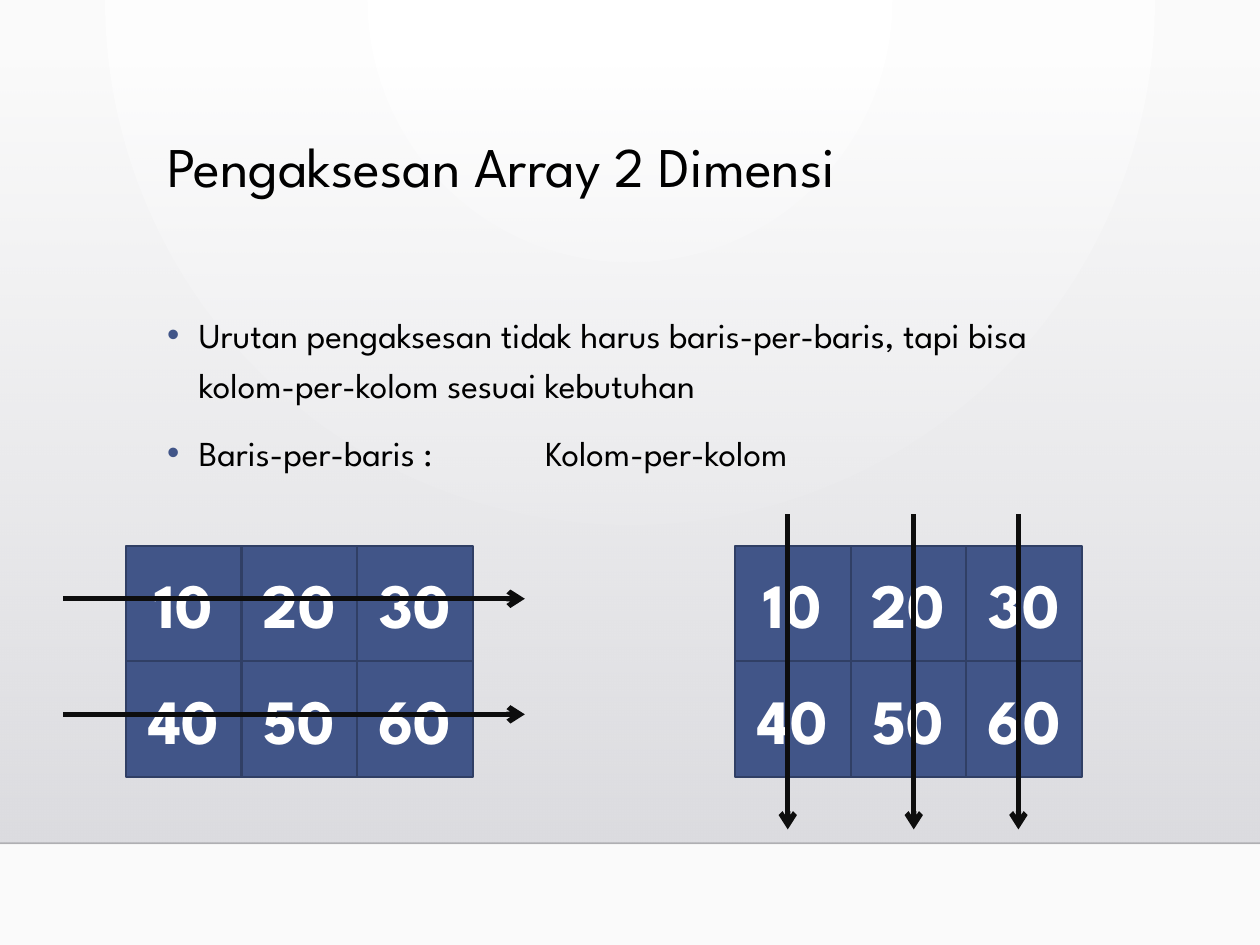
from lxml.etree import SubElement
from pptx import Presentation
from pptx.dml.color import RGBColor
from pptx.enum.shapes import MSO_CONNECTOR, MSO_SHAPE
from pptx.enum.text import MSO_ANCHOR, PP_ALIGN
from pptx.oxml import parse_xml
from pptx.oxml.ns import nsdecls, qn
from pptx.util import Cm, Pt

FONT = "League Spartan"
BLACK = RGBColor(0x00, 0x00, 0x00)
WHITE = RGBColor(0xFF, 0xFF, 0xFF)
OFF_WHITE = RGBColor(0xFA, 0xFA, 0xFA)
PANEL_TOP = RGBColor(0xDC, 0xDC, 0xE0)
PANEL_BOTTOM = RGBColor(0xDE, 0xDE, 0xE2)
BLUE = RGBColor(0x41, 0x55, 0x88)
DARK_BLUE = RGBColor(0x30, 0x3F, 0x65)
ARROW = RGBColor(0x0D, 0x0D, 0x0D)
RADIAL = '<a:path path="circle"><a:fillToRect l="43000" r="43000" b="100000"/></a:path>'
DOWNWARD = '<a:lin ang="5400000" scaled="0"/>'

CELL = 2.33
GRID_TOP = 11
ROWS = (("10", "20", "30"), ("40", "50", "60"))
BULLETS = (
    "Urutan pengaksesan tidak harus baris-per-baris, tapi bisa kolom-per-kolom sesuai kebutuhan",
    "Baris-per-baris : \t\tKolom-per-kolom",
)


def set_gradient(fill, first, last, first_alpha, direction):
    """Turn a fill into a two-colour gradient with the given direction."""
    fill.gradient()
    gradient = fill._fill._gradFill
    for child in list(gradient):
        gradient.remove(child)
    source = (
        f'<a:gradFill {nsdecls("a")}><a:gsLst>'
        f'<a:gs pos="0"><a:srgbClr val="{first}"><a:alpha val="{first_alpha * 1000}"/></a:srgbClr></a:gs>'
        f'<a:gs pos="100000"><a:srgbClr val="{last}"/></a:gs>'
        f"</a:gsLst>{direction}</a:gradFill>"
    )
    gradient.extend(list(parse_xml(source)))


def add_line(slide, start, end, color, width):
    """Add a straight line without shadow and return it."""
    line = slide.shapes.add_connector(
        MSO_CONNECTOR.STRAIGHT, *(Cm(value) for value in (*start, *end))
    )
    line.line.color.rgb = color
    line.line.width = Pt(width)
    SubElement(line._element.spPr, qn("a:effectLst"))
    return line


def add_arrow(slide, start, end):
    """Add a thick line with an open arrowhead at its end."""
    arrow = add_line(slide, start, end, ARROW, 3)
    SubElement(arrow.line._get_or_add_ln(), qn("a:tailEnd"), type="arrow")


def add_backdrop(slide):
    """Add the radial background, the fading panel and its lower edge."""
    set_gradient(slide.background.fill, WHITE, OFF_WHITE, 100, RADIAL)
    panel = slide.shapes.add_shape(MSO_SHAPE.RECTANGLE, 0, Cm(1.3), Cm(25.4), Cm(15.7))
    panel.shadow.inherit = False
    panel.line.fill.background()
    set_gradient(panel.fill, PANEL_TOP, PANEL_BOTTOM, 0, DOWNWARD)
    edge = add_line(slide, (0, 17), (25.4, 17), BLACK, 1)
    color = edge._element.spPr.find(".//" + qn("a:srgbClr"))
    SubElement(color, qn("a:alpha"), val="20000")


def add_text_frame(slide, top, height):
    """Add a wrapping text box in the main column and return its frame."""
    box = slide.shapes.add_textbox(Cm(3.12), Cm(top), Cm(18.26), Cm(height))
    box.text_frame.word_wrap = True
    return box.text_frame


def add_run(paragraph, text, size, color, bold=False):
    """Add one formatted run to a paragraph."""
    run = paragraph.add_run()
    run.text = text
    run.font.name = FONT
    run.font.size = Pt(size)
    run.font.bold = bold
    run.font.color.rgb = color


def format_bullet(paragraph):
    """Give a paragraph a hanging blue bullet and its tab stops."""
    properties = paragraph._p.get_or_add_pPr()
    properties.set("marL", str(Cm(0.64)))
    properties.set("indent", str(Cm(-0.64)))
    bullet_color = SubElement(properties, qn("a:buClr"))
    SubElement(bullet_color, qn("a:srgbClr"), val=str(BLUE))
    SubElement(properties, qn("a:buFont"), typeface="Arial")
    SubElement(properties, qn("a:buChar"), char="•")
    tabs = SubElement(properties, qn("a:tabLst"))
    for position in (6.35, 7.62):
        SubElement(tabs, qn("a:tab"), pos=str(Cm(position)), algn="l")


def add_title(slide, text):
    """Add the slide title."""
    paragraph = add_text_frame(slide, 2.67, 2.92).paragraphs[0]
    paragraph.line_spacing = 0.9
    add_run(paragraph, text, 32, BLACK)


def add_bullets(slide, texts):
    """Add the bulleted body text."""
    frame = add_text_frame(slide, 6.02, 9.14)
    for index, text in enumerate(texts):
        paragraph = frame.add_paragraph() if index else frame.paragraphs[0]
        format_bullet(paragraph)
        paragraph.line_spacing = 1.2
        if index:
            paragraph.space_before = Pt(10)
        add_run(paragraph, text, 20, BLACK)


def add_cell(slide, left, top, text):
    """Add one square array cell with its value."""
    cell = slide.shapes.add_shape(MSO_SHAPE.RECTANGLE, Cm(left), Cm(top), Cm(CELL), Cm(CELL))
    cell.shadow.inherit = False
    cell.fill.solid()
    cell.fill.fore_color.rgb = BLUE
    cell.line.color.rgb = DARK_BLUE
    cell.line.width = Pt(1.25)
    cell.text_frame.vertical_anchor = MSO_ANCHOR.MIDDLE
    paragraph = cell.text_frame.paragraphs[0]
    paragraph.alignment = PP_ALIGN.CENTER
    add_run(paragraph, text, 36, WHITE, bold=True)


def add_array(slide, left):
    """Add the two-dimensional array as a grid of cells."""
    for row, values in enumerate(ROWS):
        for column, value in enumerate(values):
            add_cell(slide, left + column * CELL, GRID_TOP + row * CELL, value)


def main():
    """Build the slide and save it."""
    presentation = Presentation()
    presentation.slide_width = Cm(25.4)
    presentation.slide_height = Cm(19.05)
    slide = presentation.slides.add_slide(presentation.slide_layouts[6])
    add_backdrop(slide)
    add_title(slide, "Pengaksesan Array 2 Dimensi")
    add_bullets(slide, BULLETS)
    add_array(slide, 2.54)
    for row in range(len(ROWS)):
        y = 12.07 + row * CELL
        add_arrow(slide, (1.27, y), (10.58, y))
    add_array(slide, 14.82)
    for x in (15.88, 18.42, 20.53):
        add_arrow(slide, (x, 10.37), (x, 16.72))
    presentation.save("out.pptx")


if __name__ == "__main__":
    main()
